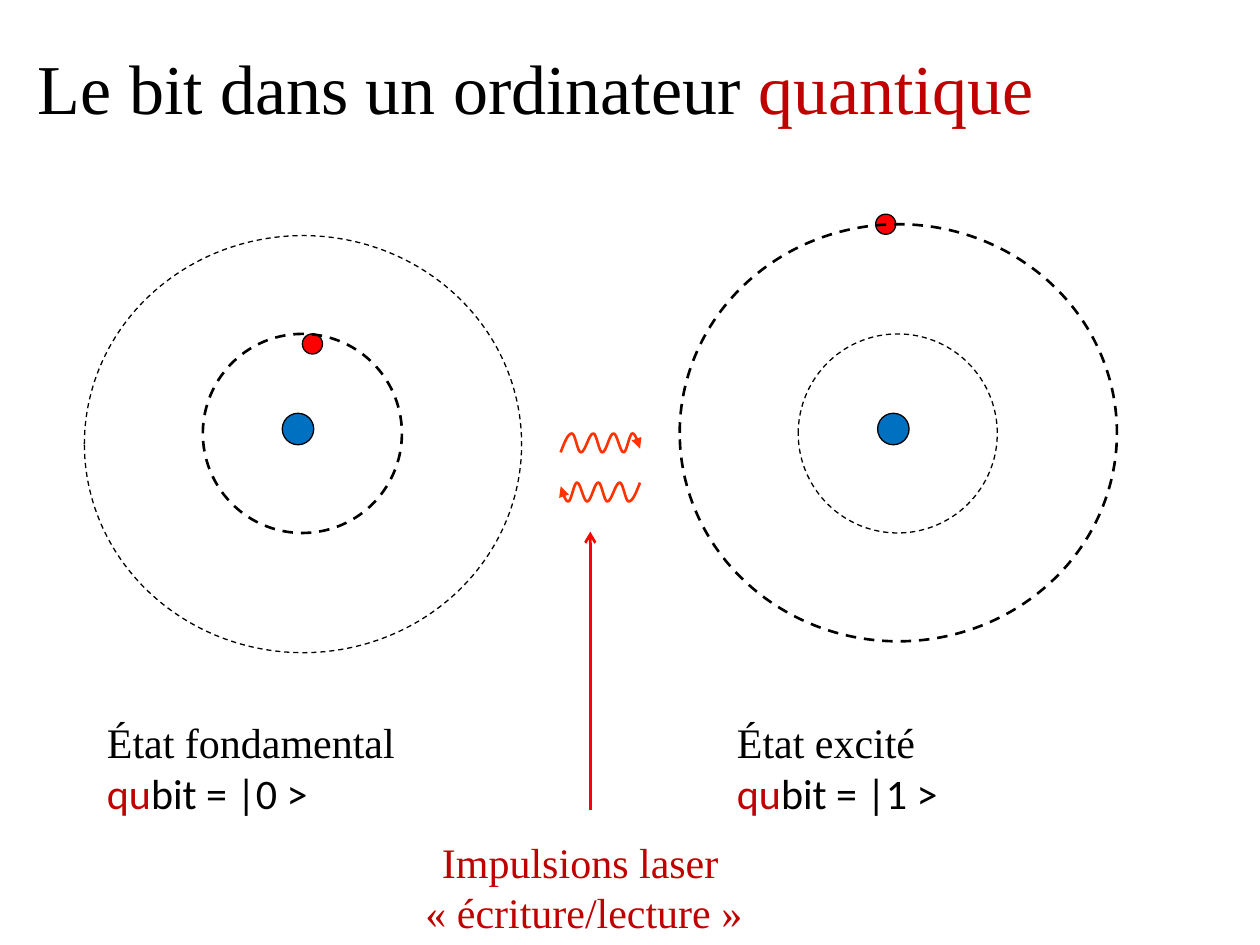
import math
from lxml import etree
from pptx import Presentation
from pptx import util as u
from pptx.dml.color import RGBColor
from pptx.enum import dml, shapes, text
from pptx.oxml.ns import qn

COL = {"black": "000000", "dark_red": "C00000", "red": "FF0000",
       "orange": "FF3300", "blue": "0070C0"}
SERIF, SANS = "Times New Roman", "Calibri"

prs = Presentation()
prs.slide_width, prs.slide_height = u.Inches(10), u.Inches(7.5)
G = prs.slide_width // 100  # grid of 100 columns by 75 rows
s = prs.slides.add_slide(prs.slide_layouts[5])


def write(sp, lines, size=24, align=text.PP_ALIGN.LEFT):
    """Fill a text shape; each line is a list of (text, font, colour)."""
    tf = sp.text_frame
    tf.word_wrap = True
    tf.vertical_anchor = text.MSO_ANCHOR.TOP
    for i, runs in enumerate(lines):
        p = tf.add_paragraph() if i else tf.paragraphs[0]
        p.alignment = align
        for words, font, colour in runs:
            r = p.add_run()
            r.text = words
            r.font.size, r.font.name = u.Pt(size), font
            r.font.color.rgb = RGBColor.from_string(COL[colour])
    return tf


def circle(x, y, w, h, fill=None, weight=0.75):
    """Draw a filled particle, or a dashed orbit when there is no fill."""
    sp = s.shapes.add_shape(shapes.MSO_SHAPE.OVAL, *(round(v * G) for v in (x, y, w, h)))
    sp.shadow.inherit = False
    sp.line.color.rgb = RGBColor.from_string(COL["black"])
    sp.line.width = u.Pt(weight)
    if fill:
        sp.fill.solid()
        sp.fill.fore_color.rgb = RGBColor.from_string(COL[fill])
    else:
        sp.fill.background()
        sp.line.dash_style = dml.MSO_LINE.DASH


# Title
title = s.shapes.title
title.left, title.top, title.width, title.height = 2 * G, 3 * G, round(90.5 * G), round(12.5 * G)
tf = write(title, [[("Le bit dans un ordinateur ", SERIF, "black"),
                    ("quantique", SERIF, "dark_red")]], size=40)
tf.auto_size = text.MSO_AUTO_SIZE.NONE

# Two atoms: offset, electron, outer orbit top, orbit weights, label
atoms = [(0, (24, 26.5), 18.7, 1.5, 0.75, 7.5, "État fondamental", "0"),
         (47.25, (69.5, 17), 17.8, 0.75, 1.5, 57.5, "État excité", "1")]
for dx, electron, outer_y, inner_w, outer_w, label_x, state, bit in atoms:
    circle(22.4 + dx, 32.8, 2.5, 2.5, "blue")
    circle(*electron, 1.6, 1.6, "red")
    circle(16.1 + dx, 26.5, 15.8, 15.8, weight=inner_w)
    circle(6.7 + dx, outer_y, 34.7, 33.1, weight=outer_w)
    label = s.shapes.add_textbox(round(label_x * G), round(56.4 * G), round(29.5 * G), round(9.1 * G))
    write(label, [[(state, SERIF, "black")],
                  [("qu", SANS, "dark_red"), (f"bit = |{bit} >", SANS, "black")]])

# Laser pulses: eased half-waves between crests and troughs, open at both ends
turns = [(44.5, 35.9), (45.4, 34.4), (46.1, 35.9), (47.1, 34.4), (47.8, 35.9),
         (48.7, 34.4), (49.5, 35.9), (50.2, 34.4), (50.8, 35.6)]
STEPS = 8
wave = [turns[0]]
for start, end in zip(turns, turns[1:]):
    for k in range(1, STEPS + 1):
        t = k / STEPS
        if start == turns[0]:
            ease = math.sin(math.pi * t / 2)
        elif end == turns[-1]:
            ease = 1 - math.cos(math.pi * t / 2)
        else:
            ease = (1 - math.cos(math.pi * t)) / 2
        wave.append((start[0] + (end[0] - start[0]) * t,
                     start[1] + (end[1] - start[1]) * ease))
back = [(95.3 - x, 74.2 - y) for x, y in wave]  # half-turn of the first pulse

arrows = []
for pulse in (wave, back):
    points = [(round(x * G), round(y * G)) for x, y in pulse]
    fb = s.shapes.build_freeform(*points[0])
    fb.add_line_segments(points[1:], close=False)
    sp = fb.convert_to_shape()
    sp.shadow.inherit = False
    sp.fill.background()
    arrows.append((sp, "orange", "triangle"))

# Laser caption
caption = s.shapes.add_textbox(round(30.3 * G), round(65.9 * G), round(31.5 * G), round(9.1 * G))
tf = write(caption, [[("Impulsions laser", SERIF, "dark_red")],
                     [("« écriture/lecture »", SERIF, "dark_red")]],
           align=text.PP_ALIGN.CENTER)
tf.paragraphs[1]._p.get_or_add_pPr().set("marL", str(round(0.6 * G)))

# Pointer from the caption to the pulses
pointer = s.shapes.add_connector(shapes.MSO_CONNECTOR.STRAIGHT,
                                 *(round(v * G) for v in (46.85, 64.3, 46.85, 42.2)))
arrows.append((pointer, "red", "arrow"))

# Line format and arrowheads
for sp, colour, head in arrows:
    sp.line.color.rgb = RGBColor.from_string(COL[colour])
    sp.line.width = u.Pt(1.5)
    etree.SubElement(sp.line._get_or_add_ln(), qn("a:tailEnd"), type=head)
etree.SubElement(pointer._element.spPr, qn("a:effectLst"))

prs.save("out.pptx")
